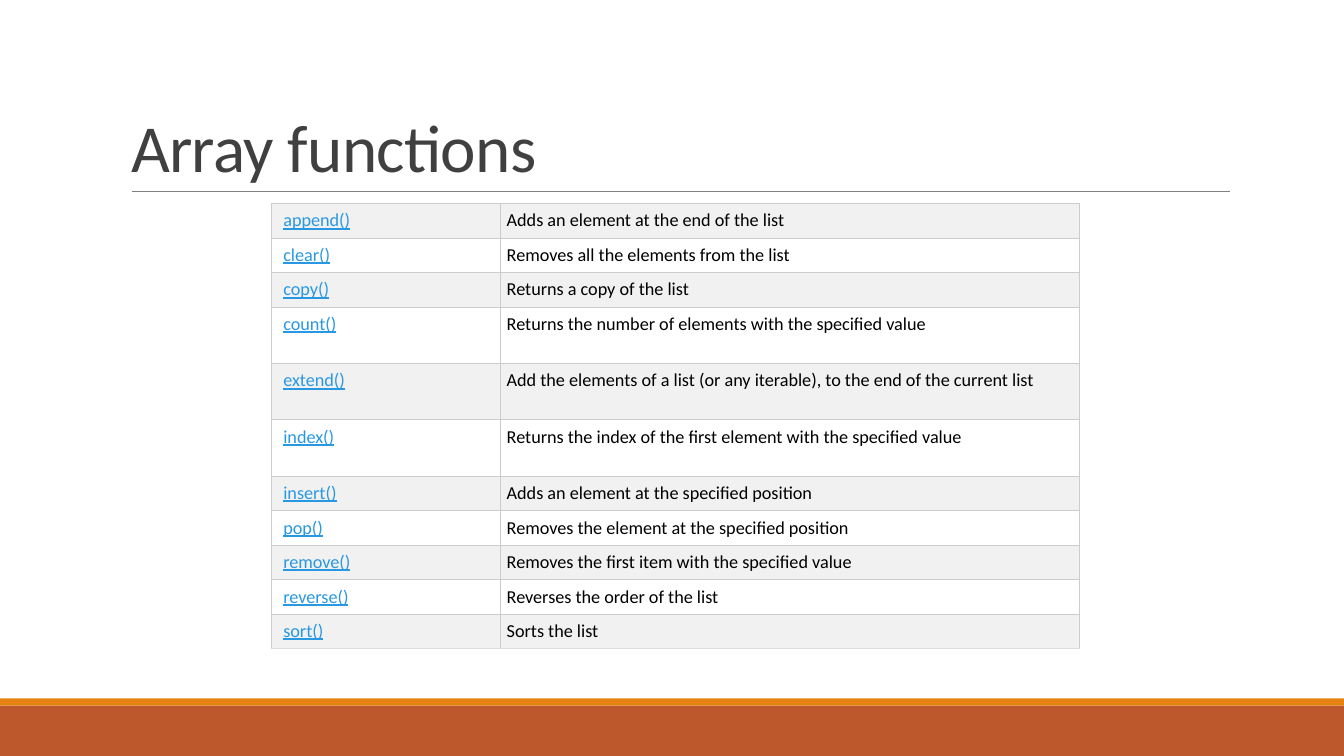
import dataclasses

import lxml.etree
import pptx
import pptx.dml.color
import pptx.enum.shapes
import pptx.enum.text
import pptx.oxml.ns
import pptx.util

Cm = pptx.util.Cm
Pt = pptx.util.Pt

TITLE = "Array functions"
FUNCTIONS = [
    ("append()", "Adds an element at the end of the list"),
    ("clear()", "Removes all the elements from the list"),
    ("copy()", "Returns a copy of the list"),
    ("count()", "Returns the number of elements with the specified value"),
    ("extend()", "Add the elements of a list (or any iterable), to the end of the current list"),
    ("index()", "Returns the index of the first element with the specified value"),
    ("insert()", "Adds an element at the specified position"),
    ("pop()", "Removes the element at the specified position"),
    ("remove()", "Removes the first item with the specified value"),
    ("reverse()", "Reverses the order of the list"),
    ("sort()", "Sorts the list"),
]
TALL_ROWS = {"count()", "extend()", "index()"}
COLUMN_WIDTHS = (5.78, 14.58)
ROW_HEIGHT, TALL_HEIGHT = 0.87, 1.42
PAGE_WIDTH, PAGE_HEIGHT = 33.87, 19.05
FOOTER_HEIGHT, STRIPE_HEIGHT = 1.27, 0.18


@dataclasses.dataclass(frozen=True)
class Theme:
    """Colours and type of the slide."""

    font: str = "Calibri"
    title_size: int = 48
    cell_size: int = 13
    title: str = "404040"
    name: str = "2998E3"
    text: str = "000000"
    bands: tuple = ("F1F1F1", "FFFFFF")
    border: str = "CCCCCC"
    last_border: str = "DDDDDD"
    rule: str = "808080"
    footer: str = "BD582C"
    stripe: str = "E48312"


THEME = Theme()


def rgb(value):
    """Return a colour for a hexadecimal value."""
    return pptx.dml.color.RGBColor.from_string(value)


def add_span(para, text, size, color):
    """Add one formatted run to a paragraph."""
    span = para.add_run()
    span.text = text
    span.font.name = THEME.font
    span.font.size = Pt(size)
    span.font.color.rgb = rgb(color)
    return span


def add_bar(page, top, height, color):
    """Add a bar across the full slide width."""
    bar = page.shapes.add_shape(
        pptx.enum.shapes.MSO_SHAPE.RECTANGLE, 0, Cm(top), Cm(PAGE_WIDTH), Cm(height))
    bar.shadow.inherit = False
    bar.fill.solid()
    bar.fill.fore_color.rgb = rgb(color)
    bar.line.fill.background()


def add_rule(page):
    """Add the thin line below the title."""
    rule = page.shapes.add_connector(
        pptx.enum.shapes.MSO_CONNECTOR.STRAIGHT, Cm(3.32), Cm(4.83), Cm(31), Cm(4.83))
    rule.line.color.rgb = rgb(THEME.rule)
    rule.line.width = Pt(0.5)
    properties = rule._element.spPr
    lxml.etree.SubElement(properties, pptx.oxml.ns.qn("a:effectLst"))


def format_title(page):
    """Place and fill the title placeholder."""
    box = page.shapes.title
    box.left, box.top, box.width, box.height = Cm(3.05), Cm(0.79), Cm(27.94), Cm(4.04)
    frame = box.text_frame
    frame.word_wrap = True
    frame.auto_size = pptx.enum.text.MSO_AUTO_SIZE.NONE
    frame.vertical_anchor = pptx.enum.text.MSO_ANCHOR.BOTTOM
    para = frame.paragraphs[0]
    para.alignment = pptx.enum.text.PP_ALIGN.LEFT
    para.line_spacing = 0.85
    span = add_span(para, TITLE, THEME.title_size, THEME.title)
    span.font._element.set("spc", "-50")


def set_borders(cell, bottom):
    """Draw the four borders of a cell."""
    qn = pptx.oxml.ns.qn
    properties = cell._tc.get_or_add_tcPr()
    colors = {"a:lnL": THEME.border, "a:lnR": THEME.border,
              "a:lnT": THEME.border, "a:lnB": bottom}
    for index, (tag, color) in enumerate(colors.items()):
        line = lxml.etree.Element(qn(tag), w=str(Pt(0.75)))
        fill = lxml.etree.SubElement(line, qn("a:solidFill"))
        lxml.etree.SubElement(fill, qn("a:srgbClr"), val=color)
        properties.insert(index, line)


def add_function_table(page):
    """Add the table of function names and descriptions."""
    heights = [TALL_HEIGHT if name in TALL_ROWS else ROW_HEIGHT for name, _ in FUNCTIONS]
    table = page.shapes.add_table(
        len(FUNCTIONS), len(COLUMN_WIDTHS), Cm(6.84), Cm(5.13),
        Cm(sum(COLUMN_WIDTHS)), Cm(sum(heights))).table
    table.first_row = table.horz_banding = False
    for column, width in zip(table.columns, COLUMN_WIDTHS):
        column.width = Cm(width)
    for index, (row, height) in enumerate(zip(table.rows, heights)):
        row.height = Cm(height)
        last = index == len(FUNCTIONS) - 1
        for position, (cell, text) in enumerate(zip(row.cells, FUNCTIONS[index])):
            is_name = position == 0
            cell.margin_left = Cm(0.3 if is_name else 0.15)
            cell.margin_right = cell.margin_top = cell.margin_bottom = Cm(0.15)
            cell.fill.solid()
            cell.fill.fore_color.rgb = rgb(THEME.bands[index % 2])
            set_borders(cell, THEME.last_border if last else THEME.border)
            span = add_span(cell.text_frame.paragraphs[0], text, THEME.cell_size,
                            THEME.name if is_name else THEME.text)
            span.font.underline = is_name


def main():
    """Build and save the slide."""
    deck = pptx.Presentation()
    deck.slide_width, deck.slide_height = Cm(PAGE_WIDTH), Cm(PAGE_HEIGHT)
    page = deck.slides.add_slide(deck.slide_layouts[5])
    footer_top = PAGE_HEIGHT - FOOTER_HEIGHT
    add_bar(page, footer_top, FOOTER_HEIGHT, THEME.footer)
    add_bar(page, footer_top - STRIPE_HEIGHT, STRIPE_HEIGHT, THEME.stripe)
    add_rule(page)
    format_title(page)
    add_function_table(page)
    deck.save("out.pptx")


if __name__ == "__main__":
    main()
